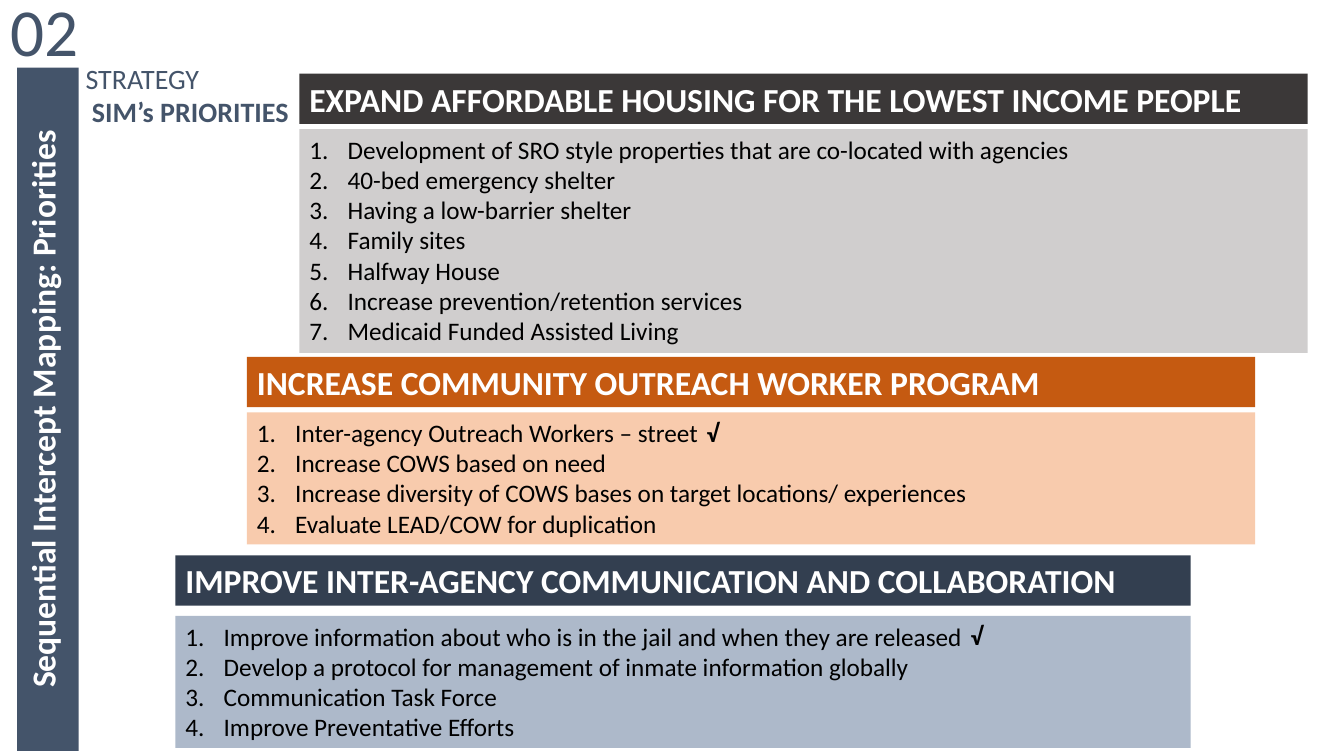
import pptx
import pptx.util
import pptx.dml.color
import pptx.enum.shapes
import pptx.enum.text
import pptx.oxml
import pptx.oxml.ns

Inches = pptx.util.Inches
RGBColor = pptx.dml.color.RGBColor
Align = pptx.enum.text.PP_ALIGN

WHITE = RGBColor(0xFF, 0xFF, 0xFF)
BLACK = RGBColor(0x00, 0x00, 0x00)
SLATE = RGBColor(0x44, 0x54, 0x6A)
CHARCOAL = RGBColor(0x3B, 0x38, 0x38)
GRAY = RGBColor(0xD0, 0xCE, 0xCE)
ORANGE = RGBColor(0xC5, 0x5A, 0x11)
PEACH = RGBColor(0xF8, 0xCB, 0xAD)
NAVY = RGBColor(0x33, 0x3F, 0x50)
BLUE = RGBColor(0xAD, 0xB9, 0xCA)

HEADING = {"size": 24, "bold": True, "color": WHITE}
BODY = {"size": 18, "bold": False, "color": BLACK}
CHECK = {"size": 18, "bold": True, "color": BLACK}
NUMBER = {"size": 48, "bold": False, "color": SLATE}
LABEL = {"size": 20, "bold": False, "color": SLATE}
LABEL_BOLD = {"size": 20, "bold": True, "color": SLATE}

PRIORITIES = [
    {
        "left": 2.97, "width": 10, "title_top": 0.73, "list_top": 1.28, "list_height": 2.22,
        "dark": CHARCOAL, "light": GRAY,
        "title": "EXPAND AFFORDABLE HOUSING FOR THE LOWEST INCOME PEOPLE",
        "items": [
            "Development of SRO style properties that are co-located with agencies",
            "40-bed emergency shelter",
            "Having a low-barrier shelter",
            "Family sites",
            "Halfway House",
            "Increase prevention/retention services",
            "Medicaid Funded Assisted Living",
        ],
    },
    {
        "left": 2.45, "width": 10, "title_top": 3.54, "list_top": 4.09, "list_height": 1.31,
        "dark": ORANGE, "light": PEACH, "check_left": 6.91,
        "title": "INCREASE COMMUNITY OUTREACH WORKER PROGRAM",
        "items": [
            "Inter-agency Outreach Workers – street",
            "Increase COWS based on need",
            "Increase diversity of COWS bases on target locations/ experiences",
            "Evaluate LEAD/COW for duplication",
        ],
    },
    {
        "left": 1.74, "width": 10.07, "title_top": 5.51, "list_top": 6.11, "list_height": 1.31,
        "dark": NAVY, "light": BLUE, "check_left": 9.53,
        "title": "IMPROVE INTER-AGENCY COMMUNICATION AND COLLABORATION",
        "items": [
            "Improve information about who is in the jail and when they are released",
            "Develop a protocol for management of inmate information globally",
            "Communication Task Force",
            "Improve Preventative Efforts",
        ],
    },
]


def write_lines(box, lines, align=Align.LEFT, wrap=True):
    frame = box.text_frame
    frame.word_wrap = wrap
    frame.auto_size = pptx.enum.text.MSO_AUTO_SIZE.SHAPE_TO_FIT_TEXT
    frame.vertical_anchor = pptx.enum.text.MSO_ANCHOR.TOP
    for index, (text, style) in enumerate(lines):
        para = frame.add_paragraph() if index else frame.paragraphs[0]
        para.alignment = align
        span = para.add_run()
        span.text = text
        span.font.color.rgb = style["color"]
        values = {"name": "Calibri", "size": pptx.util.Pt(style["size"]), "bold": style["bold"]}
        for name, value in values.items():
            setattr(span.font, name, value)


def indent_lines(box, margin, hanging=0, numbered=False):
    for para in box.text_frame.paragraphs:
        properties = para._p.get_or_add_pPr()
        properties.set("marL", str(Inches(margin)))
        properties.set("indent", str(-Inches(hanging)))
        if numbered:
            bullet = pptx.oxml.parse_xml(
                f'<a:buAutoNum {pptx.oxml.ns.nsdecls("a")} type="arabicPeriod"/>')
            properties.append(bullet)


def add_panel(page, left, top, width, height, fill, lines, align=Align.LEFT):
    box = page.shapes.add_shape(
        pptx.enum.shapes.MSO_SHAPE.RECTANGLE,
        Inches(left), Inches(top), Inches(width), Inches(height))
    box.shadow.inherit = False
    box.fill.solid()
    box.fill.fore_color.rgb = fill
    box.line.fill.background()
    write_lines(box, lines, align)
    return box


def add_text(page, left, top, width, height, lines, wrap=False):
    box = page.shapes.add_textbox(Inches(left), Inches(top), Inches(width), Inches(height))
    write_lines(box, lines, wrap=wrap)
    return box


def add_priority(page, priority):
    left, width = priority["left"], priority["width"]
    items = [(item, BODY) for item in priority["items"]]
    listing = add_panel(page, left, priority["list_top"], width, priority["list_height"],
                        priority["light"], items)
    indent_lines(listing, 0.38, 0.38, numbered=True)
    add_panel(page, left, priority["title_top"], width, 0.5, priority["dark"],
              [(priority["title"], HEADING)])
    if "check_left" in priority:
        add_text(page, priority["check_left"], priority["list_top"], 0.33, 0.4, [("√", CHECK)])


def add_sidebar(page):
    sidebar = add_panel(page, 0.17, 0.67, 0.61, 6.78, SLATE,
                        [("Sequential Intercept Mapping: Priorities", HEADING)], Align.CENTER)
    sidebar.text_frame._txBody.bodyPr.set("vert", "vert270")


def main():
    deck = pptx.Presentation()
    deck.slide_width = Inches(13.33)
    deck.slide_height = Inches(7.5)
    page = deck.slides.add_slide(deck.slide_layouts[6])
    for priority in PRIORITIES:
        add_priority(page, priority)
    add_sidebar(page)
    add_text(page, 0.01, -0.16, 0.89, 0.91, [("02", NUMBER)])
    label = add_text(page, 0.25, 0.56, 6.67, 0.77,
                     [("STRATEGY", LABEL), (" SIM’s PRIORITIES", LABEL_BOLD)], wrap=True)
    indent_lines(label, 0.5)
    deck.save("out.pptx")


if __name__ == "__main__":
    main()
